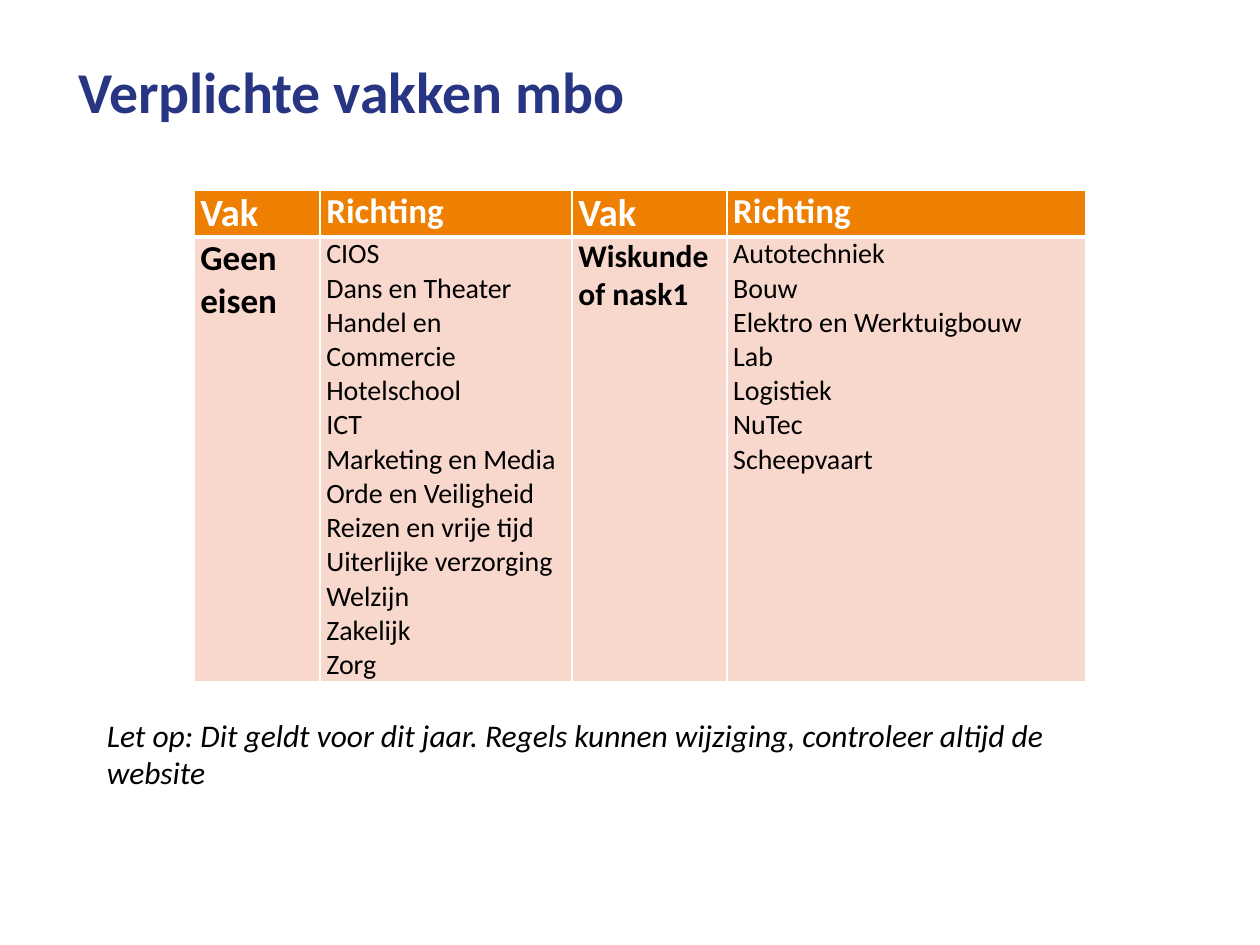
import pptx
import pptx.util
import pptx.dml.color
import pptx.enum.text
import pptx.oxml
import pptx.oxml.ns

Pt = pptx.util.Pt
RGB = pptx.dml.color.RGBColor
BLUE = RGB(0x28, 0x35, 0x83)
ORANGE = RGB(0xEE, 0x7F, 0x00)
PINK = RGB(0xF8, 0xD8, 0xCC)
WHITE = RGB(0xFF, 0xFF, 0xFF)
BLACK = RGB(0x00, 0x00, 0x00)

WIDTHS = [72, 144, 88.5, 205.2]
HEIGHTS = [23, 245.5]
HEADS = [("Vak", 22), ("Richting", 20), ("Vak", 22), ("Richting", 20)]
FREE = [
    "CIOS", "Dans en Theater", "Handel en Commercie", "Hotelschool", "ICT",
    "Marketing en Media", "Orde en Veiligheid", "Reizen en vrije tijd",
    "Uiterlijke verzorging", "Welzijn", "Zakelijk", "Zorg",
]
TECH = [
    "Autotechniek", "Bouw", "Elektro en Werktuigbouw", "Lab", "Logistiek",
    "NuTec", "Scheepvaart",
]
BODY = [
    (["Geen eisen"], 20, True),
    (FREE, 16, False),
    (["Wiskunde of nask1"], 18, True),
    (TECH, 16, False),
]


def write(frame, lines, size, color, bold=False, italic=False):
    for i, line in enumerate(lines):
        para = frame.paragraphs[0] if i == 0 else frame.add_paragraph()
        run = para.add_run()
        run.text = line
        font = run.font
        font.name = "Calibri"
        font.size = Pt(size)
        font.bold = bold
        font.italic = italic
        font.color.rgb = color


def border(cell, side, width):
    line = pptx.oxml.parse_xml(
        f'<a:ln{side} {pptx.oxml.ns.nsdecls("a")} w="{Pt(width)}">'
        f'<a:solidFill><a:srgbClr val="{WHITE}"/></a:solidFill></a:ln{side}>'
    )
    cell._tc.get_or_add_tcPr().append(line)


def fill_cell(cell, lines, size, bold, color, back, top, bottom):
    for side, width in (("L", 1), ("R", 1), ("T", top), ("B", bottom)):
        border(cell, side, width)
    cell.fill.solid()
    cell.fill.fore_color.rgb = back
    cell.margin_left = cell.margin_right = Pt(3.6)
    cell.margin_top = cell.margin_bottom = 0
    write(cell.text_frame, lines, size, color, bold)


def add_title(slide):
    title = slide.shapes.title
    title.left, title.top = Pt(37.4), Pt(9.4)
    title.width, title.height = Pt(648), Pt(90)
    frame = title.text_frame
    frame.auto_size = pptx.enum.text.MSO_AUTO_SIZE.NONE
    frame.vertical_anchor = pptx.enum.text.MSO_ANCHOR.MIDDLE
    para = frame.paragraphs[0]
    para.alignment = pptx.enum.text.PP_ALIGN.LEFT
    para.line_spacing = 0.9
    write(frame, ["Verplichte vakken mbo"], 33, BLUE, True)


def add_grid(slide):
    table = slide.shapes.add_table(
        2, 4, Pt(110.9), Pt(108.7), Pt(sum(WIDTHS)), Pt(sum(HEIGHTS))
    ).table
    for col, width in zip(table.columns, WIDTHS):
        col.width = Pt(width)
    for row, height in zip(table.rows, HEIGHTS):
        row.height = Pt(height)
    for i, (text, size) in enumerate(HEADS):
        fill_cell(table.cell(0, i), [text], size, True, WHITE, ORANGE, 1, 3)
    for i, (lines, size, bold) in enumerate(BODY):
        fill_cell(table.cell(1, i), lines, size, bold, BLACK, PINK, 3, 1)


def add_note(slide):
    box = slide.shapes.add_textbox(Pt(54), Pt(405.4), Pt(586.8), Pt(51))
    box.text_frame.word_wrap = True
    text = (
        "Let op: Dit geldt voor dit jaar. Regels kunnen wijziging, "
        "controleer altijd de website"
    )
    write(box.text_frame, [text], 18, BLACK, italic=True)


def main():
    deck = pptx.Presentation()
    deck.slide_width, deck.slide_height = Pt(720), Pt(540)
    slide = deck.slides.add_slide(deck.slide_layouts[5])
    add_title(slide)
    add_grid(slide)
    add_note(slide)
    deck.save("out.pptx")


if __name__ == "__main__":
    main()
